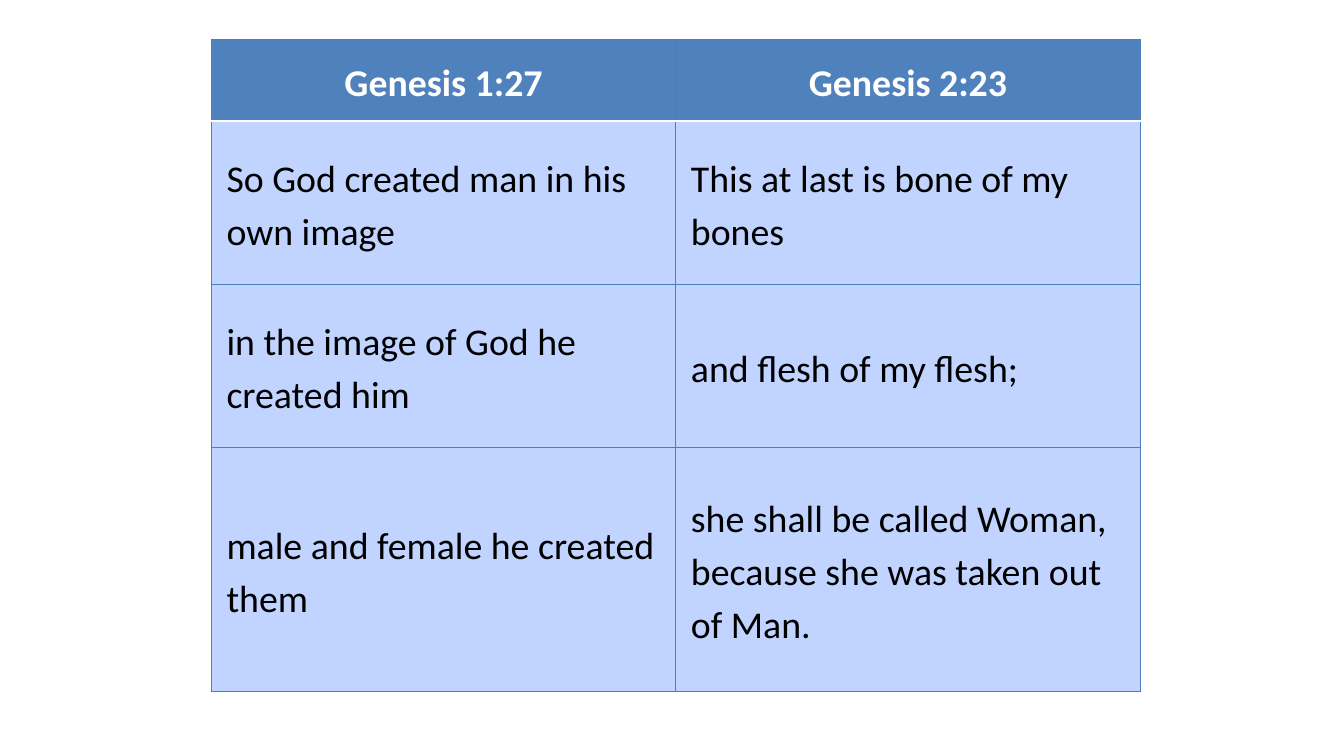
import pptx
import pptx.util
import pptx.dml.color
import pptx.enum.text
import pptx.oxml
import pptx.oxml.ns

Pt = pptx.util.Pt
VERSES = [
    ("Genesis 1:27", "Genesis 2:23"),
    ("So God created man in his own image", "This at last is bone of my bones"),
    ("in the image of God he created him", "and flesh of my flesh;"),
    ("male and female he created them",
     "she shall be called Woman, because she was taken out of Man."),
]
ROW_SHARES = [1, 2, 2, 3]
HEADER_FILL, BODY_FILL, GRID = "4F81BD", "C0D4FF", "4B7EBC"
WHITE, BLACK = "FFFFFF", "000000"


def color(code):
    return pptx.dml.color.RGBColor.from_string(code)


def add_border(cell, side, code, points):
    cell._tc.get_or_add_tcPr().append(pptx.oxml.parse_xml(
        f'<a:ln{side} {pptx.oxml.ns.nsdecls("a")} w="{int(Pt(points))}">'
        f'<a:solidFill><a:srgbClr val="{code}"/></a:solidFill></a:ln{side}>'))


def format_cell(cell, text, row):
    header = row == 0
    for side in "LRTB":
        divider = (row, side) in ((0, "B"), (1, "T"))
        add_border(cell, side, WHITE if divider else GRID, 2 if divider else 0.75)
    cell.fill.solid()
    cell.fill.fore_color.rgb = color(HEADER_FILL if header else BODY_FILL)
    cell.vertical_anchor = pptx.enum.text.MSO_ANCHOR.MIDDLE
    cell.margin_left = cell.margin_right = Pt(0.75 if header else 10.8)
    cell.margin_top = cell.margin_bottom = Pt(0.75 if header else 14.4)
    cell.text = text
    para = cell.text_frame.paragraphs[0]
    para.alignment = (pptx.enum.text.PP_ALIGN.CENTER if header
                      else pptx.enum.text.PP_ALIGN.LEFT)
    para.line_spacing = 1.15
    para.space_after = Pt(10)
    para.font.name = "Calibri"
    para.font.size = Pt(27)
    para.font.bold = header
    para.font.color.rgb = color(WHITE if header else BLACK)


def add_verse_table(page, left, top, width, height):
    table = page.shapes.add_table(
        len(VERSES), len(VERSES[0]), Pt(left), Pt(top), Pt(width), Pt(height)).table
    table.horz_banding = False
    for column in table.columns:
        column.width = Pt(width / len(VERSES[0]))
    for row, (verses, share) in enumerate(zip(VERSES, ROW_SHARES)):
        table.rows[row].height = Pt(height * share / sum(ROW_SHARES))
        for column, text in enumerate(verses):
            format_cell(table.cell(row, column), text, row)


def main():
    deck = pptx.Presentation()
    deck.slide_width, deck.slide_height = Pt(960), Pt(540)
    page = deck.slides.add_slide(deck.slide_layouts[6])
    add_verse_table(page, 151, 28.25, 663.5, 466)
    deck.save("out.pptx")


if __name__ == "__main__":
    main()
